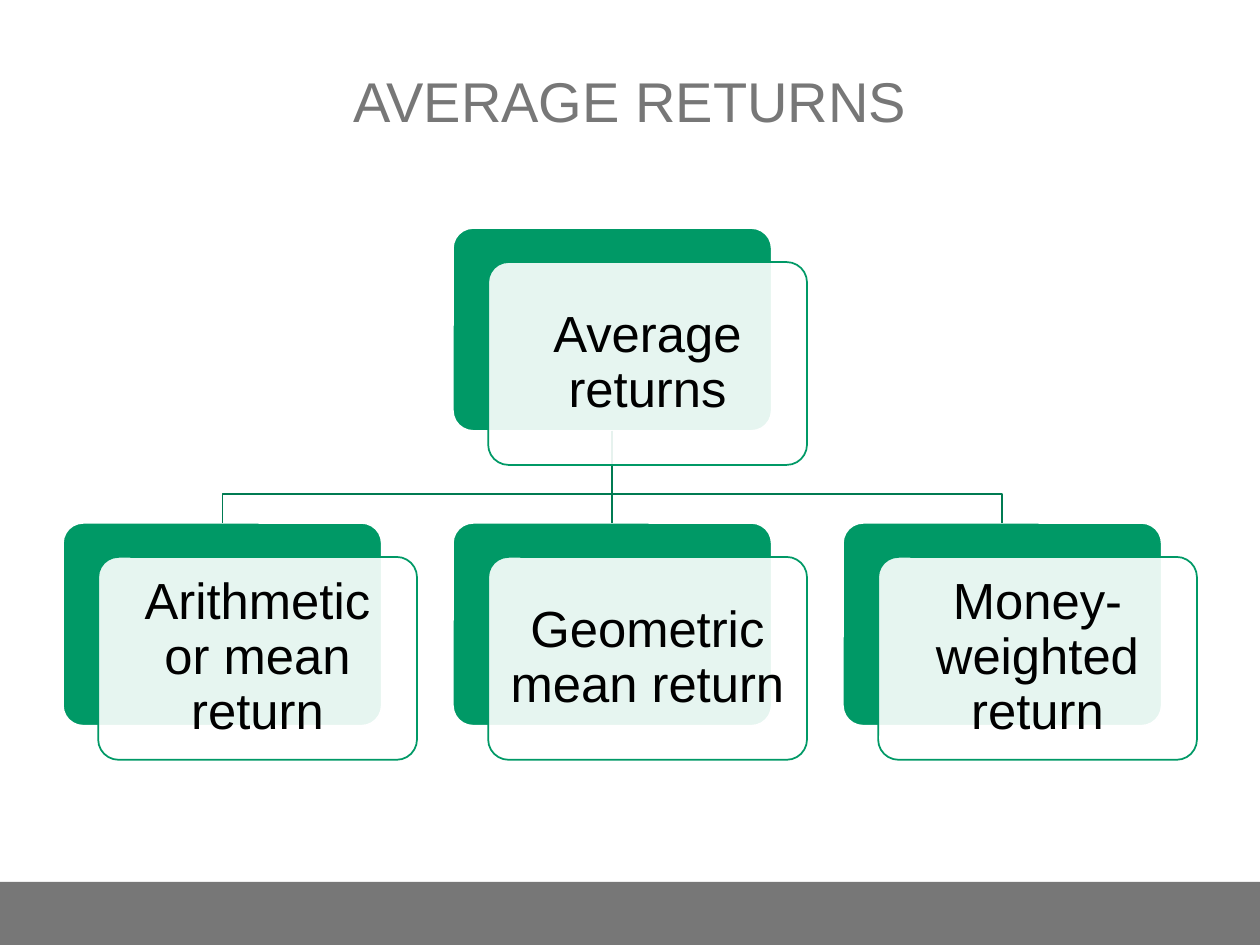
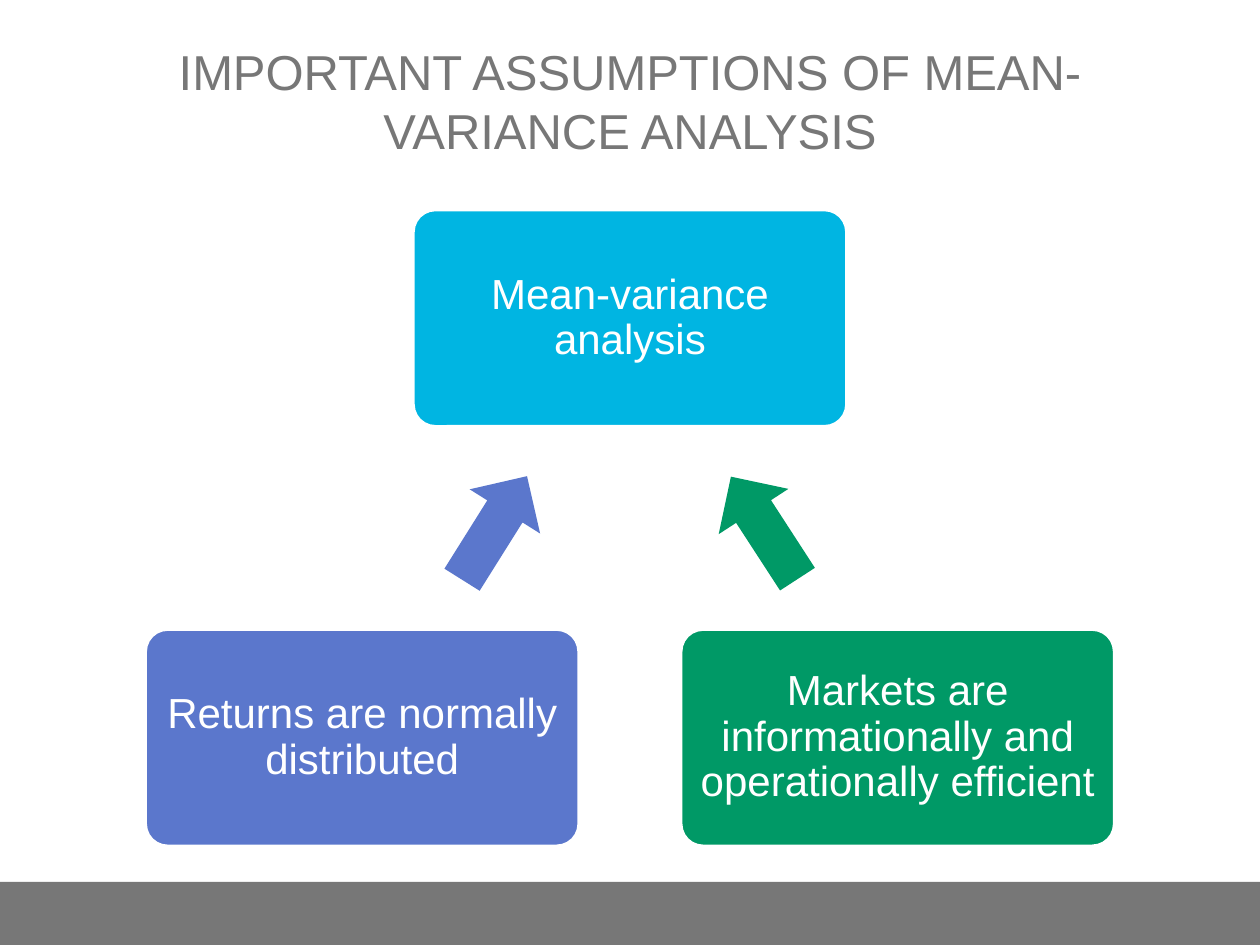
from lxml.etree import SubElement
from pptx import Presentation
from pptx.dml.color import RGBColor
from pptx.enum.shapes import MSO_CONNECTOR, MSO_SHAPE
from pptx.enum.text import MSO_ANCHOR, PP_ALIGN
from pptx.oxml.ns import qn
from pptx.util import Inches, Pt

GREY = RGBColor(0x77, 0x77, 0x77)
GREEN = RGBColor(0x00, 0x99, 0x66)
DARK_GREEN = RGBColor(0x00, 0x7B, 0x52)
CYAN = RGBColor(0x00, 0xB5, 0xE2)
BLUE = RGBColor(0x5B, 0x77, 0xCC)
WHITE = RGBColor(0xFF, 0xFF, 0xFF)
BLACK = RGBColor(0x00, 0x00, 0x00)
FONT = "Arial"
SIDES = ("margin_left", "margin_top", "margin_right", "margin_bottom")


def set_attributes(target, values):
    """Set each named attribute on the target."""
    for name, value in values.items():
        setattr(target, name, value)


def write_text(shape, text, size, color, margins, spacing=1.0):
    """Write one centred paragraph in a shape."""
    frame = shape.text_frame
    set_attributes(frame, {"word_wrap": True, "vertical_anchor": MSO_ANCHOR.MIDDLE})
    set_attributes(frame, dict(zip(SIDES, map(Inches, margins))))
    para = frame.paragraphs[0]
    set_attributes(para, {"alignment": PP_ALIGN.CENTER, "line_spacing": spacing})
    span = para.add_run()
    span.text = text
    set_attributes(span.font, {"name": FONT, "size": Pt(size)})
    span.font.color.rgb = color


def add_filled(page, kind, box, fill, line=None):
    """Add a preset shape with a solid fill and an optional thin outline."""
    shape = page.shapes.add_shape(kind, *map(Inches, box))
    shape.shadow.inherit = False
    shape.fill.solid()
    shape.fill.fore_color.rgb = fill
    if line is None:
        shape.line.fill.background()
    else:
        shape.line.color.rgb = line
        shape.line.width = Pt(1)
    return shape


def add_rounded(page, box, fill, line):
    """Add a rectangle with lightly rounded corners."""
    shape = add_filled(page, MSO_SHAPE.ROUNDED_RECTANGLE, box, fill, line)
    shape.adjustments[0] = 0.1
    return shape


def add_page(deck, title, size):
    """Add a page with the shared title and footer band."""
    page = deck.slides.add_slide(deck.slide_layouts[6])
    add_filled(page, MSO_SHAPE.RECTANGLE, (0, 7, 10, 0.5), GREY)
    heading = page.shapes.add_textbox(*map(Inches, (0.42, 0.17, 9.16, 1.25)))
    write_text(heading, title, size, GREY, (0.1, 0.05, 0.1, 0.05))
    return page


def add_front_card(page, back, text):
    """Add the translucent card that overlaps a green back card."""
    card = add_rounded(page, (0, 0, 0, 0), WHITE, GREEN)
    set_attributes(card, {
        "left": back.left + Inches(0.28), "top": back.top + Inches(0.27),
        "width": back.width, "height": back.height,
    })
    color = card.fill._xPr.find(qn("a:solidFill"))[0]
    SubElement(color, qn("a:alpha"), val="90000")
    write_text(card, text, 29, BLACK, (0.12,) * 4, 0.9)


def add_branch(page, parent, child):
    """Join two back cards with a straight or stepped line."""
    start = parent.left + parent.width // 2, parent.top + parent.height
    end = child.left + child.width // 2, child.top
    if start[0] == end[0]:
        branch = page.shapes.add_connector(MSO_CONNECTOR.STRAIGHT, *start, *end)
        branch.begin_connect(parent, 2)
        branch.end_connect(child, 0)
        SubElement(branch._element.spPr, qn("a:effectLst"))
    else:
        bend = start[1] + Inches(0.5)
        builder = page.shapes.build_freeform(*start)
        builder.add_line_segments([(start[0], bend), (end[0], bend), end], close=False)
        branch = builder.convert_to_shape()
        branch.fill.background()
        branch.shadow.inherit = False
    branch.line.color.rgb = DARK_GREEN
    branch.line.width = Pt(1)


def draw_hierarchy(page, box, root, leaves):
    """Draw a root card centred over a row of leaf cards."""
    left, top, width, height = box
    card_width, card_height = 2.53, 1.61
    step = (width - card_width - 0.28) / (len(leaves) - 1)
    leaf_top = top + height - card_height - 0.27
    places = [(left + step * (len(leaves) - 1) / 2, top)]
    places += [(left + step * index, leaf_top) for index in range(len(leaves))]
    backs = [add_rounded(page, (*place, card_width, card_height), GREEN, WHITE)
             for place in places]
    for leaf in backs[1:]:
        add_branch(page, backs[0], leaf)
    for back, text in zip(backs, [root, *leaves]):
        add_front_card(page, back, text)


def draw_assumptions(page, box, result, assumptions):
    """Draw two assumption cards with arrows leading up to a result card."""
    left, top, width, height = box
    card_width, card_height = 3.43, 1.71
    middle = left + width / 2
    low = top + height - card_height
    cards = [(middle - card_width / 2, top, result, CYAN),
             (left, low, assumptions[0], BLUE),
             (left + width - card_width, low, assumptions[1], GREEN)]
    for card_left, card_top, text, fill in cards:
        card = add_rounded(page, (card_left, card_top, card_width, card_height), fill, WHITE)
        write_text(card, text, 24, WHITE, (0.09, 0.1, 0.09, 0.1), 0.9)
    arrows = [(MSO_SHAPE.RIGHT_ARROW, -1.07, -57.9, BLUE),
              (MSO_SHAPE.LEFT_ARROW, 1.07, 57, GREEN)]
    for kind, offset, turn, fill in arrows:
        place = (middle + offset - 0.49, top + 2.19, 0.97, 0.66)
        add_filled(page, kind, place, fill).rotation = turn


def main():
    """Build and save the deck."""
    deck = Presentation()
    set_attributes(deck, {"slide_width": Inches(10), "slide_height": Inches(7.5)})
    page = add_page(deck, "AVERAGE RETURNS", 32)
    draw_hierarchy(page, (0.5, 1.81, 9, 4.22), "Average returns", [
        "Arithmetic or mean return", "Geometric mean return", "Money-weighted return"])
    page = add_page(deck, "IMPORTANT ASSUMPTIONS OF MEAN-VARIANCE ANALYSIS", 28)
    draw_assumptions(page, (1.16, 1.67, 7.68, 5.04), "Mean-variance analysis", [
        "Returns are normally distributed",
        "Markets are informationally and operationally efficient"])
    deck.save("out.pptx")


if __name__ == "__main__":
    main()
